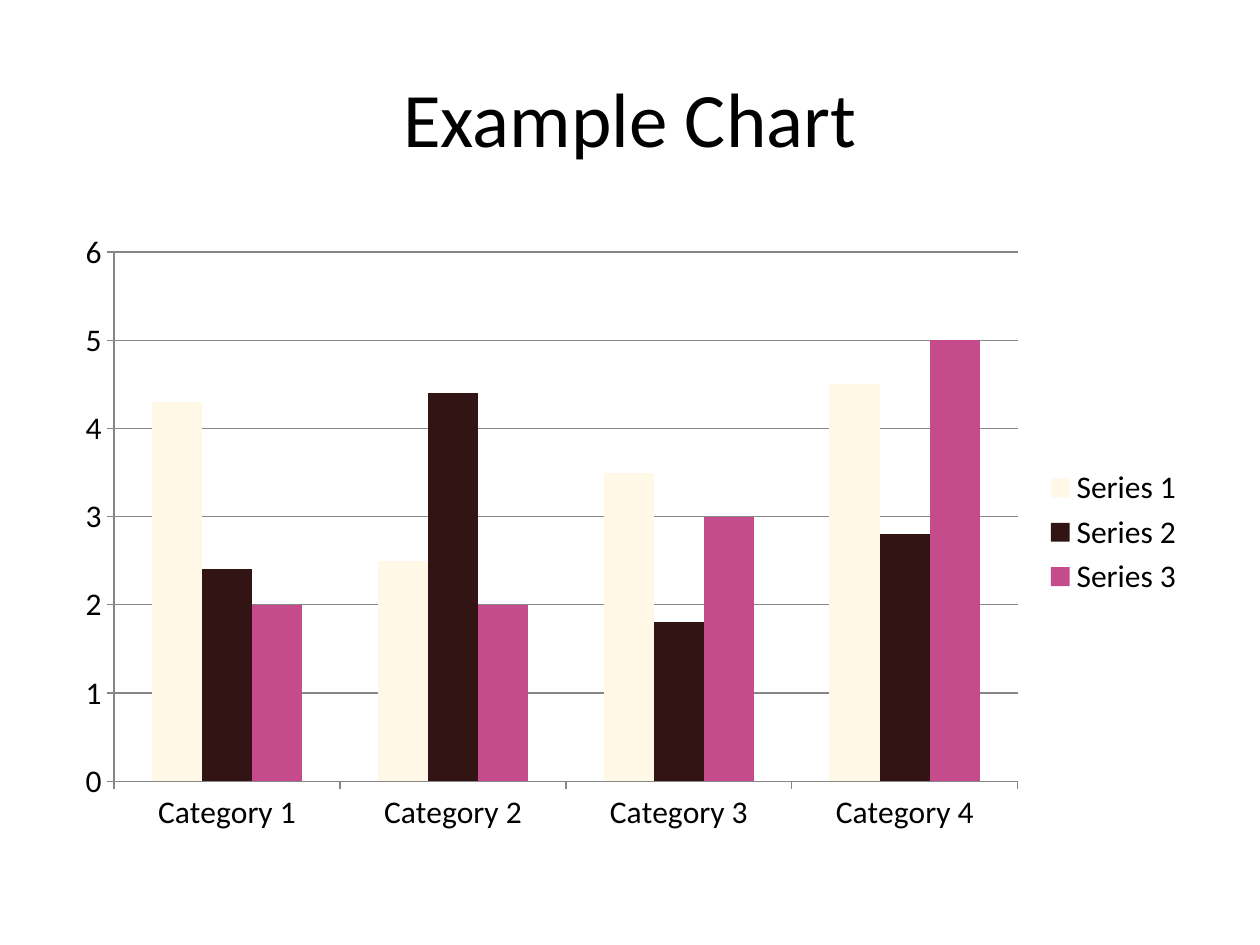
from pptx import Presentation
from pptx.chart.data import CategoryChartData
from pptx.dml.color import RGBColor
from pptx.enum.chart import XL_CHART_TYPE, XL_LEGEND_POSITION, XL_TICK_MARK
from pptx.enum.text import MSO_ANCHOR, PP_ALIGN
from pptx.util import Pt

CLUSTERED = XL_CHART_TYPE.COLUMN_CLUSTERED
RIGHT = XL_LEGEND_POSITION.RIGHT
OUTSIDE = XL_TICK_MARK.OUTSIDE
MIDDLE = MSO_ANCHOR.MIDDLE
CENTER = PP_ALIGN.CENTER

FONT = "Calibri"
COLORS = {
    "text": "000000",
    "axis": "868686",
    "Series 1": "FFF8E7",
    "Series 2": "321414",
    "Series 3": "C54B8C",
}
VALUES = {
    "Series 1": (4.3, 2.5, 3.5, 4.5),
    "Series 2": (2.4, 4.4, 1.8, 2.8),
    "Series 3": (2, 2, 3, 5),
}


def style_font(font, size):
    font.name = FONT
    font.size = Pt(size)
    font.color.rgb = RGBColor.from_string(COLORS["text"])


def style_line(line):
    line.color.rgb = RGBColor.from_string(COLORS["axis"])
    line.width = Pt(0.75)


presentation = Presentation()
presentation.slide_width = Pt(720)
presentation.slide_height = Pt(540)
slide = presentation.slides.add_slide(presentation.slide_layouts[5])

title = slide.shapes.title
title.left, title.top, title.width, title.height = Pt(36), Pt(21.6), Pt(648), Pt(90)
title.text_frame.vertical_anchor = MIDDLE
paragraph = title.text_frame.paragraphs[0]
paragraph.alignment = CENTER
run = paragraph.add_run()
run.text = "Example Chart"
style_font(run.font, 44)

chart_data = CategoryChartData()
chart_data.categories = [f"Category {number}" for number in range(1, 5)]
for name, values in VALUES.items():
    chart_data.add_series(name, values)

chart = slide.shapes.add_chart(
    CLUSTERED, Pt(36), Pt(126), Pt(648), Pt(356.4), chart_data
).chart
style_font(chart.font, 18)
chart.has_title = False
chart.has_legend = True
chart.legend.position = RIGHT
chart.legend.include_in_layout = False

for axis in (chart.category_axis, chart.value_axis):
    axis.major_tick_mark = OUTSIDE
    style_line(axis.format.line)

value_axis = chart.value_axis
value_axis.minimum_scale = 0
value_axis.maximum_scale = 6
value_axis.major_unit = 1
value_axis.has_major_gridlines = True
style_line(value_axis.major_gridlines.format.line)

plot = chart.plots[0]
plot.gap_width = 150
plot.vary_by_categories = False
for series in plot.series:
    series.format.fill.solid()
    series.format.fill.fore_color.rgb = RGBColor.from_string(COLORS[series.name])

presentation.save("out.pptx")
